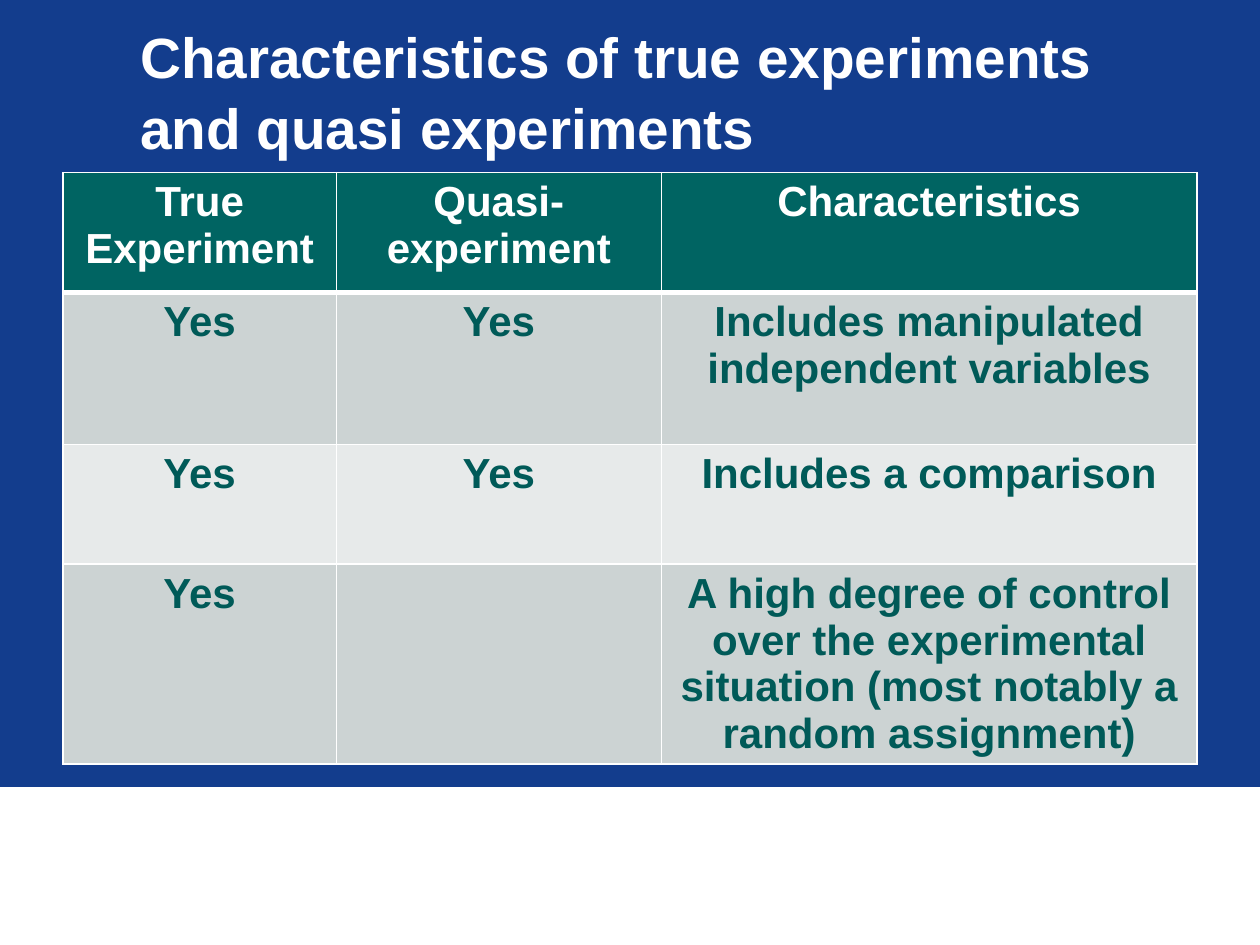
from lxml import etree
from pptx import Presentation
from pptx.dml.color import RGBColor
from pptx.enum.shapes import MSO_SHAPE
from pptx.enum.text import MSO_ANCHOR, PP_ALIGN
from pptx.oxml.ns import qn
from pptx.util import Cm, Pt

RECTANGLE = MSO_SHAPE.RECTANGLE
MIDDLE = MSO_ANCHOR.MIDDLE
LEFT, CENTER = PP_ALIGN.LEFT, PP_ALIGN.CENTER

BLUE = RGBColor(0x13, 0x3D, 0x8D)
WHITE = RGBColor(0xFF, 0xFF, 0xFF)
TEAL = RGBColor(0x00, 0x64, 0x62)
DARK_TEAL = RGBColor(0x00, 0x5A, 0x58)
GREY = RGBColor(0xCC, 0xD3, 0xD3)
PALE_GREY = RGBColor(0xE7, 0xEA, 0xEA)

TITLE = "Characteristics of true experiments and quasi experiments"
ROWS = [
    ("True Experiment", "Quasi-experiment", "Characteristics"),
    ("Yes", "Yes", "Includes manipulated independent variables"),
    ("Yes", "Yes", "Includes a comparison"),
    ("Yes", "", "A high degree of control over the experimental situation "
                "(most notably a random assignment)"),
]
COLUMN_WIDTHS = [5.51, 6.55, 10.8]
ROW_HEIGHTS = [2.41, 3.07, 2.41, 2.41]
TABLE_HEIGHT = 12.24
TITLE_FORMAT = {"name": "Arial", "size": Pt(32.4), "bold": True}
CELL_FORMAT = {"name": "Arial", "size": Pt(24), "bold": True}


def write(para, text, font_format, color, alignment):
    para.alignment = alignment
    span = para.add_run()
    span.text = text
    for name, value in font_format.items():
        setattr(span.font, name, value)
    span.font.color.rgb = color


def add_borders(cell, widths):
    properties = cell._tc.get_or_add_tcPr()
    for position, (side, width) in enumerate(widths.items()):
        line = etree.Element(qn(f"a:ln{side}"), w=str(Pt(width)))
        fill = etree.SubElement(line, qn("a:solidFill"))
        etree.SubElement(fill, qn("a:srgbClr"), val=str(WHITE))
        properties.insert(position, line)


def add_title(page):
    title = page.shapes.title
    title.left, title.top, title.width, title.height = map(Cm, (2.57, 0.23, 21.56, 3.18))
    title.text_frame.word_wrap = True
    title.text_frame.vertical_anchor = MIDDLE
    para = title.text_frame.paragraphs[0]
    para.line_spacing = 1.04
    write(para, TITLE, TITLE_FORMAT, WHITE, LEFT)


def add_footer_band(page, deck):
    top = Cm(15.88)
    band = page.shapes.add_shape(RECTANGLE, 0, top, deck.slide_width, deck.slide_height - top)
    band.shadow.inherit = False
    band.fill.solid()
    band.fill.fore_color.rgb = WHITE
    band.line.color.rgb = WHITE
    band.line.width = Pt(0.75)


def add_comparison_table(page):
    frame = page.shapes.add_table(len(ROWS), len(COLUMN_WIDTHS), Cm(1.27), Cm(3.48),
                                  Cm(sum(COLUMN_WIDTHS)), Cm(TABLE_HEIGHT))
    table = frame.table
    for column, width in zip(table.columns, COLUMN_WIDTHS):
        column.width = Cm(width)
    for row, height in zip(table.rows, ROW_HEIGHTS):
        row.height = Cm(height)
    frame.height = Cm(TABLE_HEIGHT)
    for row_number, texts in enumerate(ROWS):
        is_header = row_number == 0
        fill_color = TEAL if is_header else (PALE_GREY, GREY)[row_number % 2]
        text_color = WHITE if is_header else DARK_TEAL
        for column_number, text in enumerate(texts):
            cell = table.cell(row_number, column_number)
            cell.fill.solid()
            cell.fill.fore_color.rgb = fill_color
            add_borders(cell, {"L": 1, "R": 1, "T": 1, "B": 3 if is_header else 1})
            if text:
                write(cell.text_frame.paragraphs[0], text, CELL_FORMAT, text_color, CENTER)


def main():
    deck = Presentation()
    deck.slide_width, deck.slide_height = Cm(25.4), Cm(19.05)
    page = deck.slides.add_slide(deck.slide_layouts[5])
    page.background.fill.solid()
    page.background.fill.fore_color.rgb = BLUE
    add_footer_band(page, deck)
    add_title(page)
    add_comparison_table(page)
    deck.save("out.pptx")


if __name__ == "__main__":
    main()
